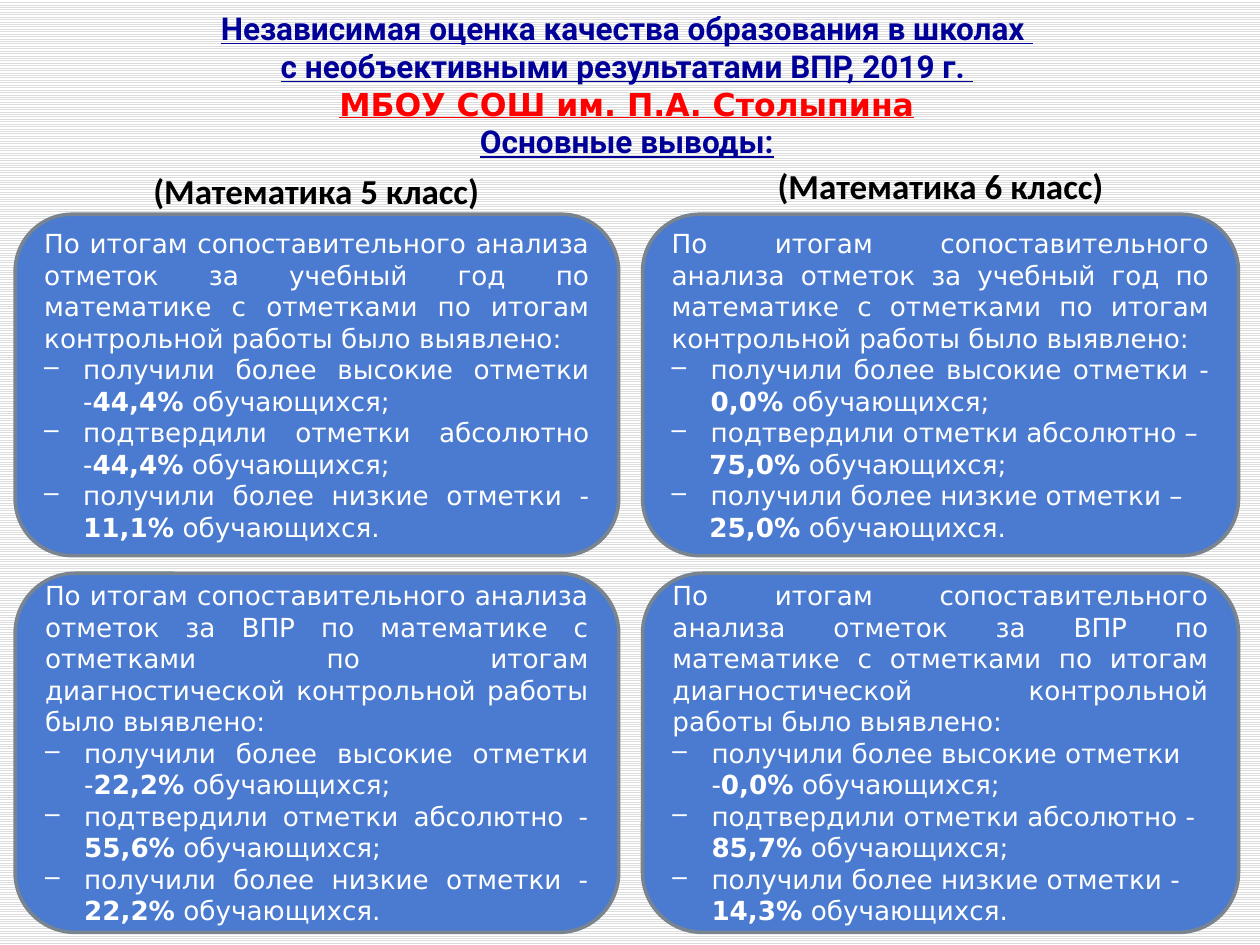
from dataclasses import dataclass

from lxml import etree
from pptx import Presentation
from pptx import util as u
from pptx.dml.color import RGBColor
from pptx.enum import dml, shapes, text
from pptx.oxml.ns import qn


@dataclass(frozen=True)
class Theme:
    navy: str = "000099"
    red: str = "FF0000"
    black: str = "000000"
    white: str = "FFFFFF"
    stripe: str = "DDDDDD"
    card: str = "4B7BD0"
    border: str = "79848F"
    title_font: str = "Roboto"
    body_font: str = "DejaVu Sans"
    heading_font: str = "Calibri"
    title_size: int = 18
    heading_size: int = 20
    body_size: int = 15


@dataclass(frozen=True)
class Box:
    """Area in inches on the slide."""
    left: float
    top: float
    width: float
    height: float

    def emu(self) -> list:
        return [u.Inches(v) for v in (self.left, self.top, self.width, self.height)]


@dataclass(frozen=True)
class Finding:
    dash: str
    share: str


@dataclass(frozen=True)
class Card:
    column: int
    row: int
    intro: str
    findings: tuple
    justified: bool = True
    split: tuple = ()  # findings whose share stands on its own line


THEME = Theme()
COLUMNS = ((0.12, 4.79), (5.1, 4.73))  # left, width
ROWS = ((1.7, 2.71), (4.55, 2.85))  # top, height
INDENT = 0.31
SPLIT_INDENT = 0.3

TITLE_BOX = Box(0.12, 0, 9.71, 1.32)
TITLE = (
    ("Независимая оценка качества образования в школах ", THEME.title_font, THEME.navy),
    ("с необъективными результатами ВПР, 2019 г. ", THEME.title_font, THEME.navy),
    ("МБОУ СОШ им. П.А. Столыпина", THEME.body_font, THEME.red),
    ("Основные выводы:", THEME.title_font, THEME.navy),
)
HEADINGS = (
    ("(Математика 5 класс)", Box(1.02, 1.19, 2.98, 0.68)),
    ("(Математика 6 класс)", Box(6.01, 1.19, 2.91, 0.6)),
)

YEAR_INTRO = ("По итогам сопоставительного анализа отметок за учебный год по математике "
              "с отметками по итогам контрольной работы было выявлено:")
TEST_INTRO = ("По итогам сопоставительного анализа отметок за ВПР по математике с отметками "
              "по итогам диагностической контрольной работы было выявлено:")
LABELS = ("получили более высокие отметки ",
          "подтвердили отметки абсолютно ",
          "получили более низкие отметки ")
ENDINGS = (" обучающихся;", " обучающихся;", " обучающихся.")

CARDS = (
    Card(0, 0, YEAR_INTRO,
         (Finding("-", "44,4%"), Finding("-", "44,4%"), Finding("- ", "11,1%"))),
    Card(0, 1, TEST_INTRO,
         (Finding("-", "22,2%"), Finding("- ", "55,6%"), Finding("- ", "22,2%"))),
    Card(1, 0, YEAR_INTRO,
         (Finding("- ", "0,0%"), Finding("– ", "75,0%"), Finding("– ", "25,0%")),
         split=(1, 2)),
    Card(1, 1, TEST_INTRO,
         (Finding("-", "0,0%"), Finding("- ", "85,7%"), Finding("- ", "14,3%")),
         justified=False),
)


def style(font, name: str, size: int, color: str, bold: bool = False) -> None:
    font.name, font.size, font.bold = name, u.Pt(size), bold
    font.color.rgb = RGBColor.from_string(color)


def add_text(slide, box: Box, content: str, anchor):
    """Add a wrapped text box and return its centred paragraph."""
    frame = slide.shapes.add_textbox(*box.emu()).text_frame
    frame.word_wrap = True
    frame.vertical_anchor = anchor
    frame.text = content
    paragraph = frame.paragraphs[0]
    paragraph.alignment = text.PP_ALIGN.CENTER
    return paragraph


def add_title(slide) -> None:
    content = "\v".join(line for line, _, _ in TITLE)
    paragraph = add_text(slide, TITLE_BOX, content, text.MSO_ANCHOR.BOTTOM)
    for run, (_, name, color) in zip(paragraph.runs, TITLE):
        style(run.font, name, THEME.title_size, color, bold=True)
        run.font.underline = True


def add_heading(slide, content: str, box: Box) -> None:
    paragraph = add_text(slide, box, content, text.MSO_ANCHOR.MIDDLE)
    paragraph.line_spacing = 0.9
    style(paragraph.runs[0].font, THEME.heading_font, THEME.heading_size,
          THEME.black, bold=True)


def indent(paragraph, left: float, bullet: str = "") -> None:
    properties = paragraph._p.get_or_add_pPr()
    properties.set("marL", str(u.Inches(left)))
    properties.set("indent", str(-u.Inches(left) if bullet else 0))
    if bullet:
        etree.SubElement(properties, qn("a:buChar")).set("char", bullet)


def add_finding(frame, finding: Finding, label: str, ending: str,
                alignment, split: bool) -> None:
    paragraph = frame.add_paragraph()
    paragraph.text = label + finding.dash
    paragraph.alignment = alignment
    indent(paragraph, INDENT, "–")
    if split:
        paragraph = frame.add_paragraph()
        paragraph.alignment = alignment
        indent(paragraph, SPLIT_INDENT)
    share = paragraph.add_run()
    share.text = finding.share
    share.font.bold = True
    paragraph.add_run().text = ending


def add_card(slide, card: Card) -> None:
    left, width = COLUMNS[card.column]
    top, height = ROWS[card.row]
    shape = slide.shapes.add_shape(shapes.MSO_SHAPE.ROUNDED_RECTANGLE,
                                   *Box(left, top, width, height).emu())
    shape.shadow.inherit = False
    shape.fill.solid()
    shape.fill.fore_color.rgb = RGBColor.from_string(THEME.card)
    shape.line.color.rgb = RGBColor.from_string(THEME.border)
    shape.line.width = u.Pt(2)

    frame = shape.text_frame
    frame.word_wrap = True
    frame.vertical_anchor = text.MSO_ANCHOR.MIDDLE
    frame.text = card.intro
    frame.paragraphs[0].alignment = text.PP_ALIGN.JUSTIFY
    alignment = text.PP_ALIGN.JUSTIFY if card.justified else text.PP_ALIGN.LEFT
    for index, (finding, label, ending) in enumerate(zip(card.findings, LABELS, ENDINGS)):
        add_finding(frame, finding, label, ending, alignment, index in card.split)
    for paragraph in frame.paragraphs:
        for run in paragraph.runs:
            style(run.font, THEME.body_font, THEME.body_size, THEME.white,
                  bold=bool(run.font.bold))


def main() -> None:
    presentation = Presentation()
    presentation.slide_width, presentation.slide_height = u.Inches(10), u.Inches(7.5)
    slide = presentation.slides.add_slide(presentation.slide_layouts[6])

    # Striped background
    fill = slide.background.fill
    fill.patterned()
    fill.pattern = dml.MSO_PATTERN.LIGHT_HORIZONTAL
    fill.fore_color.rgb = RGBColor.from_string(THEME.stripe)
    fill.back_color.rgb = RGBColor.from_string(THEME.white)

    # Title, column headings and findings
    add_title(slide)
    for card in CARDS:
        add_card(slide, card)
    for content, box in HEADINGS:
        add_heading(slide, content, box)

    presentation.save("out.pptx")


if __name__ == "__main__":
    main()
